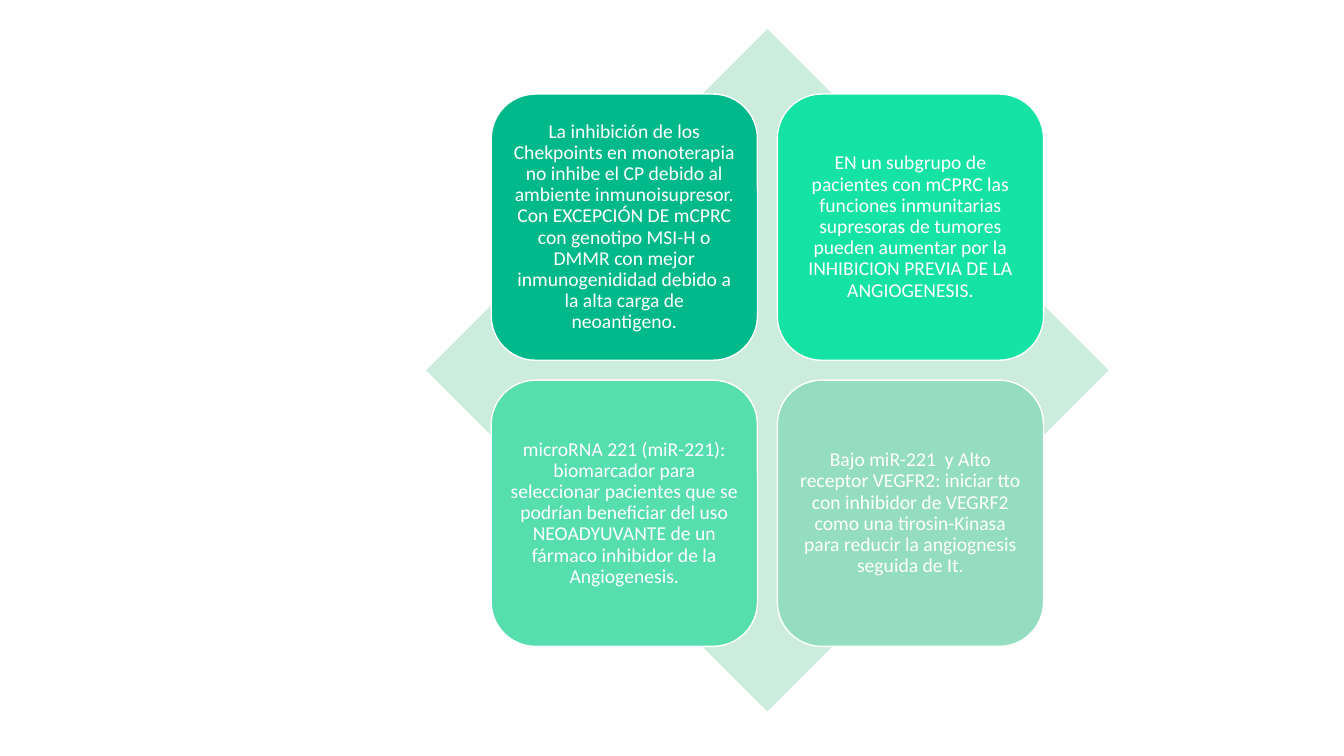
from pptx import Presentation
from pptx.dml.color import RGBColor
from pptx.enum.shapes import MSO_SHAPE as Shape
from pptx.enum.text import MSO_ANCHOR as Anchor, PP_ALIGN as Align
from pptx.util import Cm, Pt

COLORS = {
    "diamond": "CCECDE",
    "white": "FFFFFF",
    "checkpoints": "00B98B",
    "angiogenesis": "14E3A4",
    "biomarker": "56DEAE",
    "treatment": "95DDC0",
}

# Quadrants, row by row: colour name and text
QUADRANTS = [
    ("checkpoints", "La inhibición de los Chekpoints en monoterapia no inhibe el CP "
     "debido al ambiente inmunoisupresor. Con EXCEPCIÓN DE mCPRC con genotipo MSI-H o "
     "DMMR con mejor inmunogenididad debido a la alta carga de neoantigeno."),
    ("angiogenesis", "EN un subgrupo de pacientes con mCPRC las funciones inmunitarias "
     "supresoras de tumores pueden aumentar por la INHIBICION PREVIA DE LA ANGIOGENESIS."),
    ("biomarker", "microRNA 221 (miR-221): biomarcador para seleccionar pacientes que se "
     "podrían beneficiar del uso NEOADYUVANTE de un fármaco inhibidor de la Angiogenesis."),
    ("treatment", "Bajo miR-221  y Alto receptor VEGFR2: iniciar tto con inhibidor de "
     "VEGRF2 como una tirosin-Kinasa para reducir la angiognesis seguida de It."),
]

# Layout in centimetres: everything is centred on the diamond
CENTER_X, CENTER_Y = 19.34, 9.33
DIAMOND_SIZE = 17.2
BOX_SIZE = 6.71
GAP = 0.5
INSET = 0.15


def color(name):
    return RGBColor.from_string(COLORS[name])


def add_square(slide, kind, left, top, size, fill):
    shape = slide.shapes.add_shape(kind, Cm(left), Cm(top), Cm(size), Cm(size))
    shape.shadow.inherit = False
    shape.fill.solid()
    shape.fill.fore_color.rgb = color(fill)
    shape.line.fill.background()
    return shape


def add_quadrant(slide, index, fill, text):
    row, column = divmod(index, 2)
    offset = BOX_SIZE + GAP / 2
    left = CENTER_X - offset + column * (BOX_SIZE + GAP)
    top = CENTER_Y - offset + row * (BOX_SIZE + GAP)
    shape = add_square(slide, Shape.ROUNDED_RECTANGLE, left, top, BOX_SIZE, fill)
    shape.line.color.rgb = color("white")
    shape.line.width = Pt(1)

    frame = shape.text_frame
    frame.word_wrap = True
    frame.vertical_anchor = Anchor.MIDDLE
    frame.margin_left = frame.margin_right = Cm(INSET)
    frame.margin_top = frame.margin_bottom = Cm(INSET)
    paragraph = frame.paragraphs[0]
    paragraph.alignment = Align.CENTER
    paragraph.line_spacing = 0.9
    run = paragraph.add_run()
    run.text = text
    run.font.name = "Calibri"
    run.font.size = Pt(14)
    run.font.color.rgb = color("white")


def main():
    presentation = Presentation()
    presentation.slide_width = Cm(33.87)
    presentation.slide_height = Cm(19.05)
    slide = presentation.slides.add_slide(presentation.slide_layouts[6])

    # Diamond behind the quadrants
    add_square(slide, Shape.DIAMOND, CENTER_X - DIAMOND_SIZE / 2,
               CENTER_Y - DIAMOND_SIZE / 2, DIAMOND_SIZE, "diamond")

    # Two by two grid of rounded boxes
    for index, (fill, text) in enumerate(QUADRANTS):
        add_quadrant(slide, index, fill, text)

    presentation.save("out.pptx")


if __name__ == "__main__":
    main()
